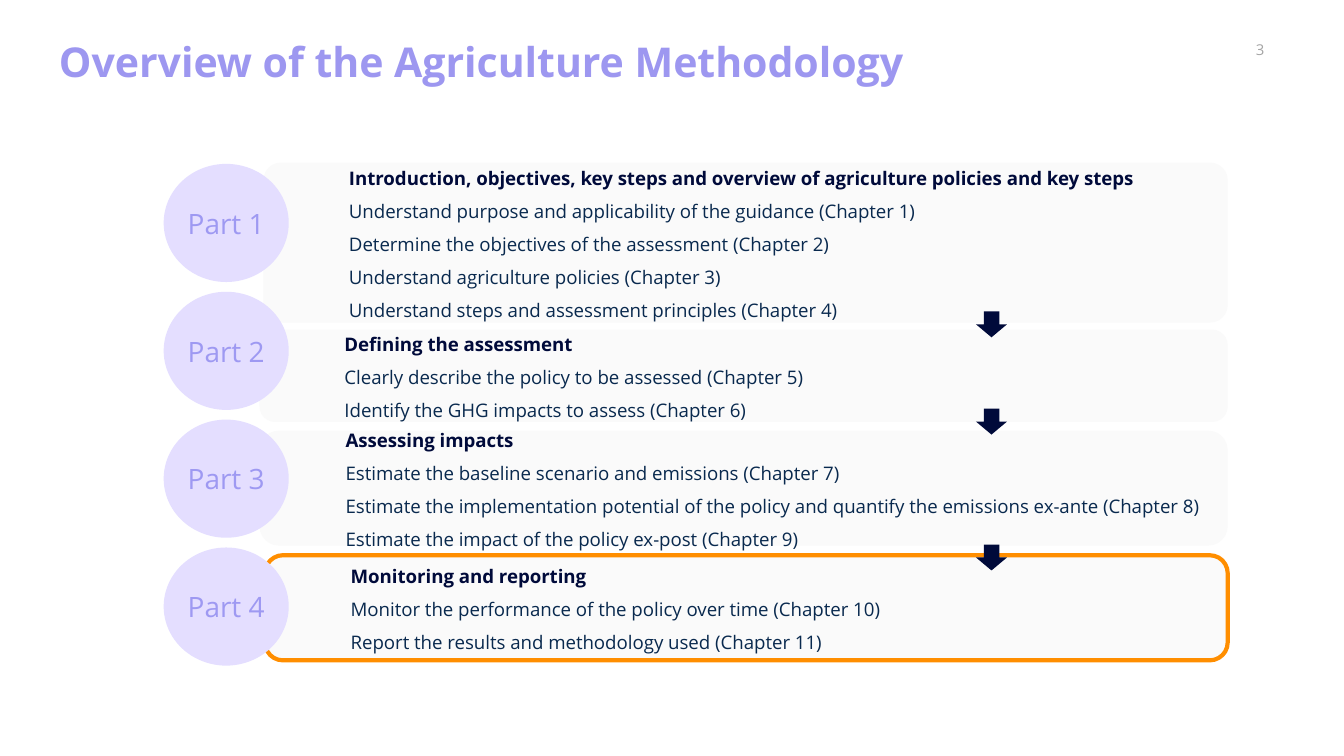
from dataclasses import dataclass

from pptx import Presentation
from pptx.dml.color import RGBColor
from pptx.enum.shapes import MSO_SHAPE
from pptx.enum.text import MSO_ANCHOR, PP_ALIGN
from pptx.util import Pt


@dataclass(frozen=True)
class Theme:
    font: str = "Open Sans"
    title: str = "9D97F0"
    badge: str = "E4DEFF"
    badge_text: str = "9E99F2"
    panel: str = "FAFAFA"
    navy: str = "000A3A"
    body: str = "09294E"
    accent: str = "FF8E00"
    number: str = "A5A5A5"
    title_size: float = 22
    badge_size: float = 15
    body_size: float = 10
    number_size: float = 8


THEME = Theme()
RIGHT = 657.7  # shared right edge of the panels
INDENT = 36

# left, top, height, corner, outlined, heading, chapters
PARTS = [
    (141.1, 87.1, 85.7, 0.11, False,
     "Introduction, objectives, key steps and overview of agriculture policies and key steps",
     ["Understand purpose and applicability of the guidance (Chapter 1)",
      "Determine the objectives of the assessment (Chapter 2)",
      "Understand agriculture policies (Chapter 3)",
      "Understand steps and assessment principles (Chapter 4)"]),
    (139, 176.6, 49.5, 0.17, False,
     "Defining the assessment",
     ["Clearly describe the policy to be assessed (Chapter 5)",
      "Identify the GHG impacts to assess (Chapter 6)"]),
    (139, 230.7, 61.6, 0.17, False,
     "Assessing impacts",
     ["Estimate the baseline scenario and emissions (Chapter 7)",
      "Estimate the implementation potential of the policy and quantify "
      "the emissions ex-ante (Chapter 8)",
      "Estimate the impact of the policy ex-post (Chapter 9)"]),
    (142, 297.5, 56.3, 0.17, True,
     "Monitoring and reporting",
     ["Monitor the performance of the policy over time (Chapter 10)",
      "Report the results and methodology used (Chapter 11)"]),
]
ARROW_TOPS = [165.5, 217.6, 290.4]


def add_run(p, text, size, color, bold=False):
    r = p.add_run()
    r.text = text
    r.font.name = THEME.font
    r.font.size = Pt(size)
    r.font.bold = bold
    r.font.color.rgb = RGBColor.from_string(color)


def set_frame(s, inset_x, inset_y, anchor):
    tf = s.text_frame
    tf.word_wrap = True
    tf.vertical_anchor = anchor
    tf.margin_left = tf.margin_right = Pt(inset_x)
    tf.margin_top = tf.margin_bottom = Pt(inset_y)
    return tf


def add_text(slide, box, inset, anchor):
    s = slide.shapes.add_textbox(*map(Pt, box))
    tf = set_frame(s, inset, inset, anchor)
    return tf.paragraphs[0]


def add_filled(slide, kind, box, fill):
    s = slide.shapes.add_shape(kind, *map(Pt, box))
    s.shadow.inherit = False
    s.fill.solid()
    s.fill.fore_color.rgb = RGBColor.from_string(fill)
    s.line.fill.background()
    return s


def add_panel(slide, left, top, height, corner, outlined, heading, chapters):
    box = (left, top, RIGHT - left, height)
    s = add_filled(slide, MSO_SHAPE.ROUNDED_RECTANGLE, box, THEME.panel)
    s.adjustments[0] = corner
    if outlined:
        s.line.color.rgb = RGBColor.from_string(THEME.accent)
        s.line.width = Pt(2.25)
    tf = set_frame(s, 7.2, 3.6, MSO_ANCHOR.MIDDLE)
    for i, text in enumerate([heading, *chapters]):
        p = tf.add_paragraph() if i else tf.paragraphs[0]
        pPr = p._p.get_or_add_pPr()
        pPr.set("marL", "0")
        pPr.set("indent", str(Pt(INDENT)))
        p.alignment = PP_ALIGN.LEFT
        p.line_spacing = 1.13
        if i:
            p.space_before = Pt(4)
        add_run(p, text, THEME.body_size, THEME.body if i else THEME.navy, bold=not i)


def add_arrow(slide, top):
    s = add_filled(slide, MSO_SHAPE.RIGHT_ARROW, (524.2, top, 13.9, 16.6), THEME.navy)
    s.rotation = 90


def add_badge(slide, index):
    box = (87.7, 87.8 + 68.5 * index, 67, 63.3)
    s = add_filled(slide, MSO_SHAPE.OVAL, box, THEME.badge)
    p = set_frame(s, 0, 0, MSO_ANCHOR.MIDDLE).paragraphs[0]
    p.alignment = PP_ALIGN.CENTER
    add_run(p, f"Part {index + 1}", THEME.badge_size, THEME.badge_text)


def main():
    prs = Presentation()
    prs.slide_width, prs.slide_height = Pt(720), Pt(405)
    slide = prs.slides.add_slide(prs.slide_layouts[6])

    # Page number and title
    p = add_text(slide, (646.6, 18.7, 56.9, 15.8), 0, MSO_ANCHOR.MIDDLE)
    p.alignment = PP_ALIGN.CENTER
    add_run(p, "3", THEME.number_size, THEME.number)
    p = add_text(slide, (24.5, 15.1, 671, 40.3), 7.2, MSO_ANCHOR.TOP)
    p.line_spacing = 0.9
    add_run(p, "Overview of the Agriculture Methodology", THEME.title_size, THEME.title, bold=True)

    # Panels, then the arrows between them
    for part in PARTS:
        add_panel(slide, *part)
    for top in ARROW_TOPS:
        add_arrow(slide, top)

    # Numbered badges
    for index in range(len(PARTS)):
        add_badge(slide, index)

    prs.save("out.pptx")


if __name__ == "__main__":
    main()
